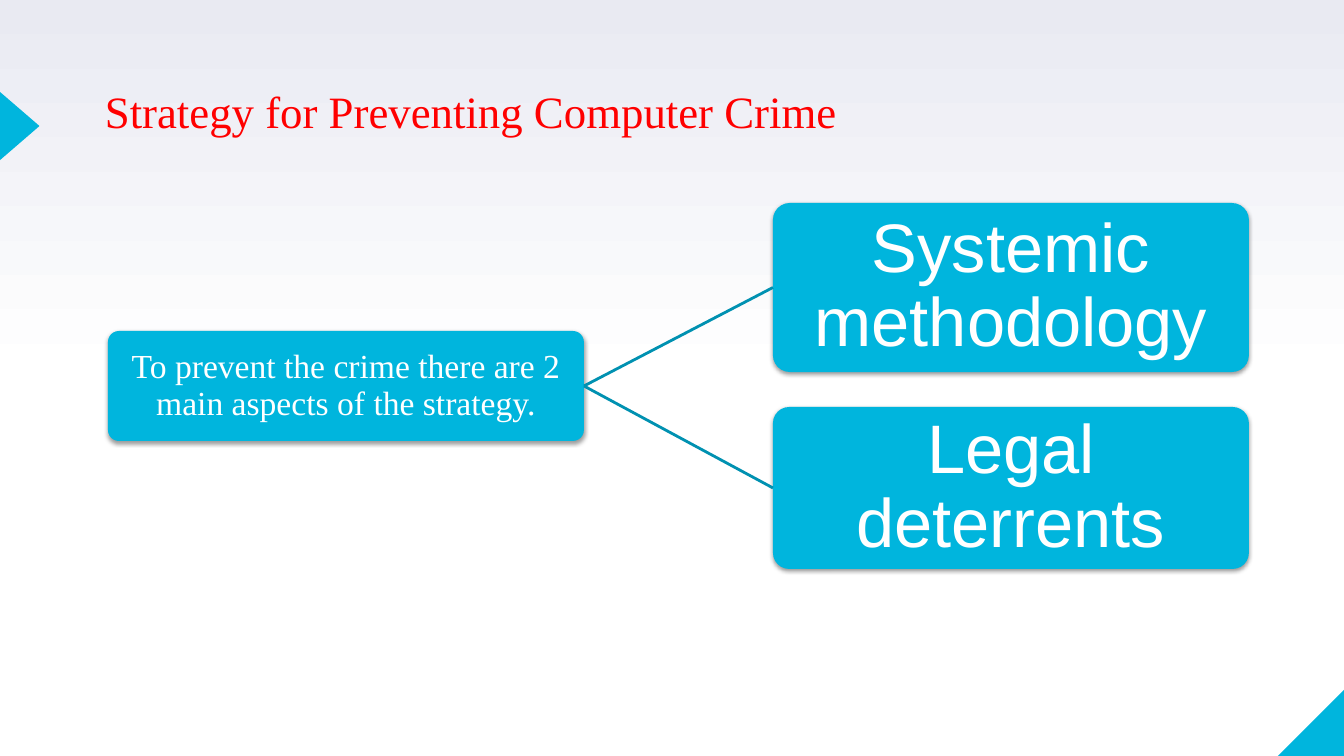
import copy

import lxml.etree
import pptx
import pptx.dml.color
import pptx.enum.shapes
import pptx.enum.text
import pptx.oxml
import pptx.oxml.ns
import pptx.util

PX = 914400 / 100.8
SHAPES = pptx.enum.shapes.MSO_SHAPE
ALIGN = pptx.enum.text.PP_ALIGN
ANCHOR = pptx.enum.text.MSO_ANCHOR
CYAN, DARK_CYAN, RED, WHITE, LAVENDER = "00B5DD", "0091B1", "FF0000", "FFFFFF", "E9EAF2"

SOFT_SHADOW = (
    '<a:outerShdw xmlns:a="http://schemas.openxmlformats.org/drawingml/2006/main"'
    ' blurRad="39370" dist="20320" dir="5400000" rotWithShape="0">'
    '<a:srgbClr val="000000"><a:alpha val="38000"/></a:srgbClr></a:outerShdw>'
)


def px(*lengths):
    return [round(length * PX) for length in lengths]


def color(hex_string):
    return pptx.dml.color.RGBColor.from_string(hex_string)


def write(shape, text, size, font, ink, align=ALIGN.LEFT, anchor=ANCHOR.TOP,
          wrap=True, inset=None, spacing=None):
    frame = shape.text_frame
    frame.word_wrap = wrap
    frame.vertical_anchor = anchor
    if inset is not None:
        margin = px(inset)[0]
        frame.margin_left = frame.margin_right = margin
        frame.margin_top = frame.margin_bottom = margin
    paragraph = frame.paragraphs[0]
    paragraph.alignment = align
    paragraph.line_spacing = spacing
    run = paragraph.add_run()
    run.text = text
    run.font.size = pptx.util.Pt(size)
    run.font.name = font
    run.font.color.rgb = color(ink)


def flat_shape(slide, kind, box):
    shape = slide.shapes.add_shape(kind, *px(*box))
    shape.shadow.inherit = False
    shape.fill.solid()
    shape.fill.fore_color.rgb = color(CYAN)
    shape.line.fill.background()
    return shape


def paint_background(slide):
    fill = slide.background.fill
    fill.gradient()
    fill.gradient_angle = 90
    bottom, top = fill.gradient_stops
    bottom.color.rgb = color(WHITE)
    bottom.position = 0
    top.color.rgb = color(LAVENDER)
    top.position = 1
    first_stop = slide.element.xpath(".//a:gsLst/a:gs")[0]
    middle_stop = copy.deepcopy(first_stop)
    middle_stop.set("pos", "50000")
    first_stop.addnext(middle_stop)


def add_ornaments(slide, width, height):
    corner_size = 68
    corner = flat_shape(slide, SHAPES.RIGHT_TRIANGLE,
                        (width - corner_size + 1, height - corner_size + 1,
                         corner_size, corner_size))
    corner.element.spPr.xfrm.set("flipH", "1")
    pointer = flat_shape(slide, SHAPES.ISOSCELES_TRIANGLE, (-15, 106, 69, 40))
    pointer.rotation = 90


def add_title(slide, box):
    title = slide.shapes.add_textbox(*px(*box))
    write(title, "Strategy for Preventing Computer Crime", 32,
          "Times New Roman", RED, wrap=False)


def add_card(slide, box, text, size, font, inset):
    card = flat_shape(slide, SHAPES.ROUNDED_RECTANGLE, box)
    card.adjustments[0] = 0.1
    effects = card.element.spPr.find(pptx.oxml.ns.qn("a:effectLst"))
    effects.append(pptx.oxml.parse_xml(SOFT_SHADOW))
    write(card, text, size, font, WHITE, align=ALIGN.CENTER,
          anchor=ANCHOR.MIDDLE, inset=inset, spacing=0.9)
    return card


def add_branch(slide, strategy, aspect):
    branch = slide.shapes.add_connector(
        pptx.enum.shapes.MSO_CONNECTOR.STRAIGHT, 0, 0, 0, 0)
    branch.begin_connect(strategy, 3)
    branch.end_connect(aspect, 1)
    branch.line.color.rgb = color(DARK_CYAN)
    branch.line.width = pptx.util.Pt(2)
    lxml.etree.SubElement(branch.element.spPr, pptx.oxml.ns.qn("a:effectLst"))


def add_hierarchy(slide, box):
    left, top, width, height = box
    card_width, strategy_height, gap = 476, 110, 35
    aspects = [("Systemic methodology", 169), ("Legal deterrents", 162)]
    strategy_top = top + (height - strategy_height) // 2
    strategy = add_card(slide, (left, strategy_top, card_width, strategy_height),
                        "To prevent the crime there are 2 main aspects of the strategy.",
                        24, "Times New Roman", 2)
    aspect_left = left + width - card_width
    aspect_top = top
    for text, aspect_height in aspects:
        aspect = add_card(slide, (aspect_left, aspect_top, card_width, aspect_height),
                          text, 49, "Arial", 3)
        add_branch(slide, strategy, aspect)
        aspect_top += aspect_height + gap


def main():
    width, height = 1344, 756
    presentation = pptx.Presentation()
    presentation.slide_width, presentation.slide_height = px(width, height)
    slide = presentation.slides.add_slide(presentation.slide_layouts[6])
    paint_background(slide)
    add_ornaments(slide, width, height)
    add_hierarchy(slide, (108, 203, 1141, 366))
    add_title(slide, (95, 79, 759, 119))
    presentation.save("out.pptx")


if __name__ == "__main__":
    main()
